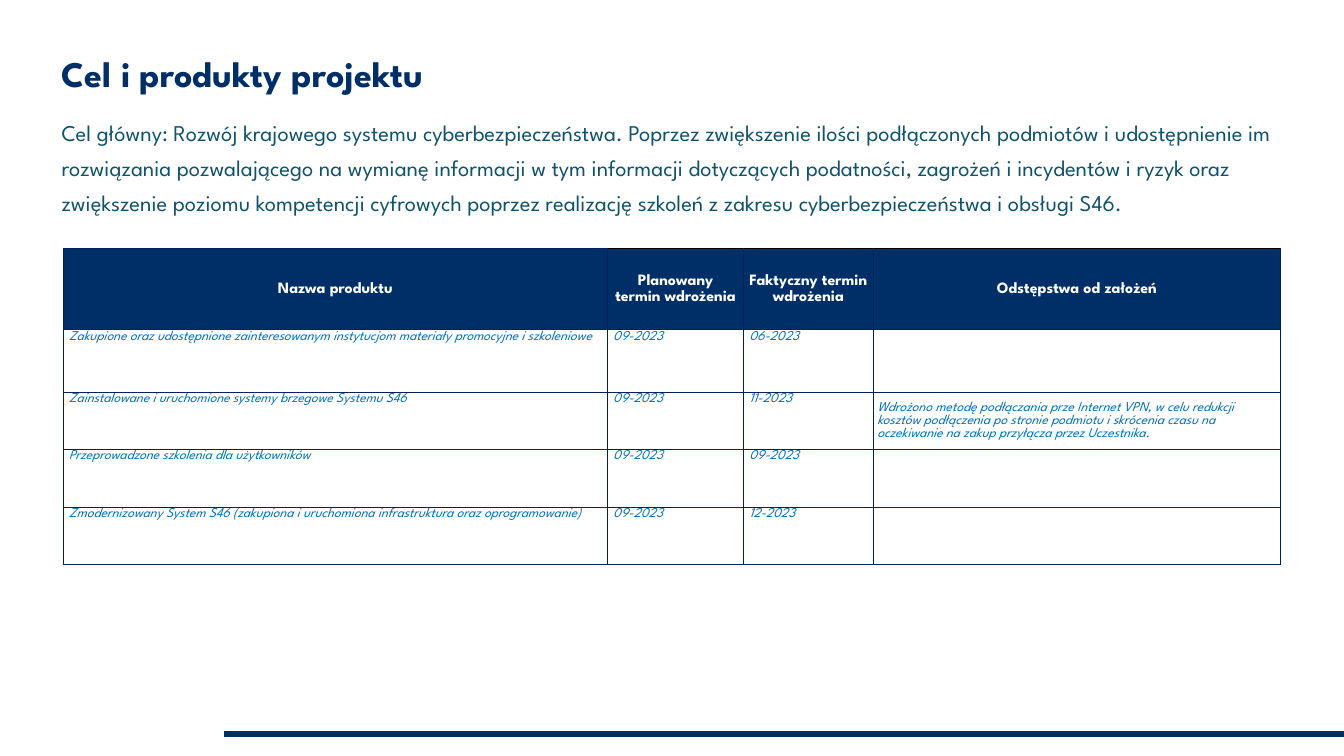
from dataclasses import dataclass
from lxml.etree import SubElement
from pptx import Presentation
from pptx.dml.color import RGBColor as Rgb
from pptx.enum.shapes import MSO_CONNECTOR as Conn
from pptx.enum.text import MSO_ANCHOR as Anchor, MSO_AUTO_SIZE as Fit, PP_ALIGN as Align
from pptx.oxml.ns import qn
from pptx.util import Inches, Pt

WIDE, HIGH = 16.59, 9.33


@dataclass(frozen=True)
class Theme:
    font: str = "League Spartan"
    navy: str = "002F67"
    edge: str = "002060"
    black: str = "000000"
    white: str = "FFFFFF"
    teal: str = "0F536C"
    blue: str = "0070C0"
    title: int = 32
    body: int = 20
    head: int = 14
    cell: int = 12


LOOK = Theme()
GOAL = (
    "Cel główny: Rozwój krajowego systemu cyberbezpieczeństwa. Poprzez zwiększenie ilości "
    "podłączonych podmiotów i udostępnienie im rozwiązania pozwalającego na wymianę informacji "
    "w tym informacji dotyczących podatności, zagrożeń i incydentów i ryzyk oraz zwiększenie "
    "poziomu kompetencji cyfrowych poprzez realizację szkoleń z zakresu cyberbezpieczeństwa "
    "i obsługi S46."
)
HEADS = ["Nazwa produktu", "Planowany termin wdrożenia", "Faktyczny termin wdrożenia",
         "Odstępstwa od założeń"]
ITEMS = [
    ["Zakupione oraz udostępnione zainteresowanym instytucjom materiały promocyjne i szkoleniowe",
     "09-2023", "06-2023", ""],
    ["Zainstalowane i uruchomione systemy brzegowe Systemu S46", "09-2023", "11-2023",
     "Wdrożono metodę podłączania prze Internet VPN, w celu redukcji kosztów podłączenia "
     "po stronie podmiotu i skrócenia czasu na oczekiwanie na zakup przyłącza przez Uczestnika."],
    ["Przeprowadzone szkolenia dla użytkowników", "09-2023", "09-2023", ""],
    ["Zmodernizowany System S46 (zakupiona i uruchomiona infrastruktura oraz oprogramowanie)",
     "09-2023", "12-2023", ""],
]
COLS = [6.72, 1.68, 1.6, 5.03]
ROWS = [1, 0.77, 0.71, 0.71, 0.71]


def write(frame, text, size, color, bold=False, italic=False, align=Align.LEFT, lead=1.0):
    par = frame.paragraphs[0]
    props = par._p.get_or_add_pPr()
    props.set("marL", "0")
    props.set("indent", "0")
    par.alignment, par.line_spacing, par.space_before = align, lead, Pt(0)
    SubElement(props, qn("a:buNone"))
    run = par.add_run()
    run.text = text
    font = run.font
    font.name, font.size, font.bold, font.italic = LOOK.font, Pt(size), bold, italic
    font.color.rgb = Rgb.from_string(color)


def inset(part, x, y):
    part.margin_left = part.margin_right = Inches(x)
    part.margin_top = part.margin_bottom = Inches(y)


def place(holder, box, anchor, text, **form):
    holder.left, holder.top, holder.width, holder.height = map(Inches, box)
    frame = holder.text_frame
    frame.word_wrap, frame.auto_size = True, Fit.NONE
    frame.vertical_anchor = anchor
    inset(frame, 0, 0)
    write(frame, text, **form)


def frame_cell(cell, top):
    """Draw the four borders, ahead of the cell's fill."""
    props = cell._tc.get_or_add_tcPr()
    for side in ("L", "R", "T", "B"):
        line = SubElement(props, qn(f"a:ln{side}"), w=str(Pt(1)))
        fill = SubElement(line, qn("a:solidFill"))
        SubElement(fill, qn("a:srgbClr"), val=top if side == "T" else LOOK.edge)


def fill_cell(cell, text, row, col):
    head, note = row == 0, row > 0 and col == len(COLS) - 1
    frame_cell(cell, LOOK.black if head and col else LOOK.edge)
    if head:
        cell.fill.solid()
        cell.fill.fore_color.rgb = Rgb.from_string(LOOK.navy)
    else:
        cell.fill.background()
    cell.vertical_anchor = Anchor.MIDDLE if head or note else Anchor.TOP
    inset(cell, *((0.05, 0.05) if note else (0.07, 0)))
    if head:
        write(cell.text_frame, text, LOOK.head, LOOK.white, bold=True,
              align=Align.CENTER, lead=1.07)
    elif text:
        write(cell.text_frame, text, LOOK.cell, LOOK.blue, italic=True, lead=1.07)


def add_grid(slide, left, top):
    box = map(Inches, (left, top, sum(COLS), sum(ROWS)))
    table = slide.shapes.add_table(len(ROWS), len(COLS), *box).table
    table.first_row = table.horz_banding = False
    for col, size in zip(table.columns, COLS):
        col.width = Inches(size)
    for row, size in zip(table.rows, ROWS):
        row.height = Inches(size)
    for r, texts in enumerate([HEADS, *ITEMS]):
        for c, text in enumerate(texts):
            fill_cell(table.cell(r, c), text, r, c)


def add_rule(slide, left, right, y):
    rule = slide.shapes.add_connector(Conn.STRAIGHT, *map(Inches, (left, y, right, y)))
    rule.line.color.rgb = Rgb.from_string(LOOK.navy)
    rule.line.width = Pt(5.25)
    SubElement(rule._element.spPr, qn("a:effectLst"))


def main():
    deck = Presentation()
    deck.slide_width, deck.slide_height = Inches(WIDE), Inches(HIGH)
    slide = deck.slides.add_slide(deck.slide_layouts[1])
    add_rule(slide, WIDE / 6, WIDE, HIGH - 0.27)
    title, body = slide.placeholders
    place(title, (0.76, 0, 13.84, 1.18), Anchor.BOTTOM, "Cel i produkty projektu",
          size=LOOK.title, color=LOOK.navy, bold=True, lead=0.9)
    place(body, (0.76, 1.37, 15.04, 1.06), Anchor.TOP, GOAL,
          size=LOOK.body, color=LOOK.teal, lead=1.3)
    add_grid(slide, 0.78, 3.07)
    deck.save("out.pptx")


if __name__ == "__main__":
    main()
